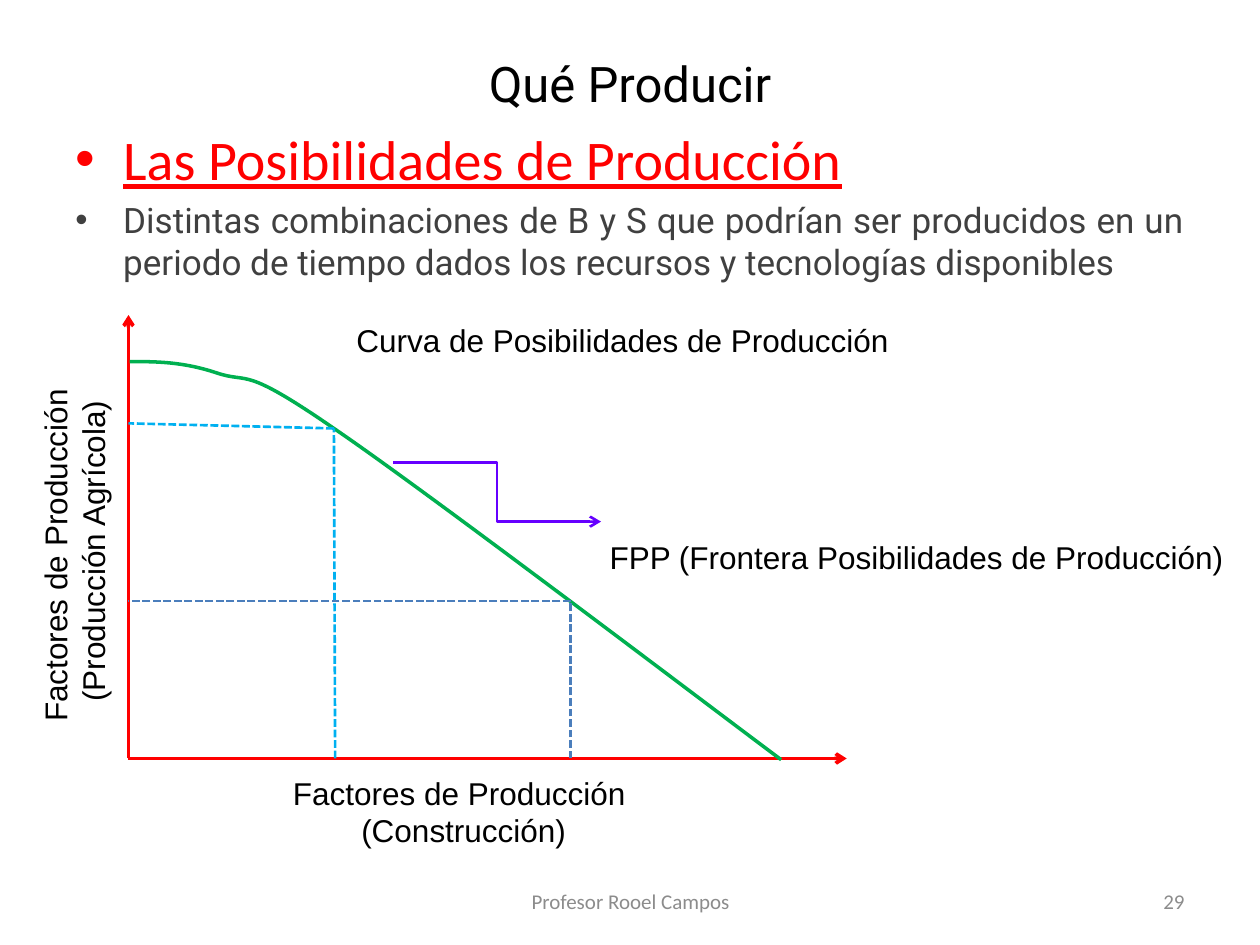
from lxml.etree import SubElement as Sub
from pptx import Presentation
from pptx.dml.color import RGBColor as RGB
from pptx.enum.dml import MSO_LINE as Dash
from pptx.enum.shapes import MSO_CONNECTOR as Conn
from pptx.enum.text import MSO_ANCHOR as Anchor, MSO_AUTO_SIZE as Fit, PP_ALIGN as Align
from pptx.oxml.ns import qn
from pptx.util import Inches, Pt

COLORS = {
    "black": "000000", "red": "FF0000", "dark": "404040", "gray": "8C8C8C",
    "green": "00B050", "sky": "00B0F0", "blue": "4B7EBC", "violet": "6600FF",
}
LEFT, BASE = 1.02, 6.02  # origin of the axes


def color(name):
    return RGB.from_string(COLORS[name])


def place(shape, box):
    shape.left, shape.top, shape.width, shape.height = map(Inches, box)


def write(para, text, font="Arial", size=18, ink="black", align=Align.LEFT, under=None):
    para.alignment = align
    run = para.add_run()
    run.text = text
    face = run.font
    face.name, face.size, face.underline = font, Pt(size), under
    face.color.rgb = color(ink)


def add_text(slide, box, lines, wrap=False, anchor=Anchor.TOP, turn=0, **style):
    shape = slide.shapes.add_textbox(*map(Inches, box))
    shape.rotation = turn
    frame = shape.text_frame
    frame.word_wrap, frame.vertical_anchor = wrap, anchor
    frame.auto_size = Fit.NONE if wrap else Fit.SHAPE_TO_FIT_TEXT
    for i, line in enumerate(lines):
        para = frame.add_paragraph() if i else frame.paragraphs[0]
        write(para, line, **style)


def add_bullet(para, text, size, **style):
    write(para, text, size=size, **style)
    para.space_before = Pt(size * 0.2)
    props = para._p.get_or_add_pPr()
    props.set("marL", str(Inches(0.38)))
    props.set("indent", str(Inches(-0.38)))
    Sub(props, qn("a:buFont"), typeface="Arial")
    Sub(props, qn("a:buChar"), char="•")


def add_line(slide, start, end, ink, width=1.5, dash=False, arrow=False,
             kind=Conn.STRAIGHT):
    line = slide.shapes.add_connector(kind, *map(Inches, start + end))
    line.line.color.rgb = color(ink)
    line.line.width = Pt(width)
    if dash:
        line.line.dash_style = Dash.SQUARE_DOT
    if arrow:
        Sub(line.line._get_or_add_ln(), qn("a:tailEnd"), type="arrow")
    Sub(line._element.spPr, qn("a:effectLst"))


def add_curve(slide, start, points, ink, width):
    """Draw Bezier segments; each takes three of the points."""
    pen = slide.shapes.build_freeform(*map(Inches, start), scale=1.0)
    pen.add_line_segments([tuple(map(Inches, p)) for p in points], close=False)
    shape = pen.convert_to_shape()
    shape.shadow.inherit = False
    shape.fill.background()
    shape.line.color.rgb = color(ink)
    shape.line.width = Pt(width)
    route = shape._element.find(".//" + qn("a:path"))
    steps = route.findall(qn("a:lnTo"))
    for i in range(0, len(steps), 3):
        bend = Sub(route, qn("a:cubicBezTo"))
        for step in steps[i:i + 3]:
            bend.append(step[0])
            route.remove(step)


def add_guides(slide, foot, point, level, ink):
    """Dashed lines from the x axis to a curve point and on to the y axis."""
    add_line(slide, (foot, BASE), point, ink, dash=True)
    add_line(slide, point, (LEFT, level), ink, dash=True)


def add_body(slide):
    box = slide.shapes.add_textbox(*map(Inches, (0.5, 0.94, 9, 1.48)))
    frame = box.text_frame
    frame.word_wrap = True
    add_bullet(frame.paragraphs[0], "Las Posibilidades de Producción", 32,
               font="Calibri", ink="red", under=True)
    add_bullet(frame.add_paragraph(),
               "Distintas combinaciones de B y S que podrían ser producidos en un "
               "periodo de tiempo dados los recursos y tecnologías disponibles",
               20, font="Roboto", ink="dark", align=Align.JUSTIFY)


def main():
    deck = Presentation()
    deck.slide_width, deck.slide_height = Inches(10), Inches(7.5)
    slide = deck.slides.add_slide(deck.slide_layouts[5])

    # Title and bullets
    title = slide.shapes.title
    place(title, (0.5, 0.3, 9, 0.71))
    title.text_frame.vertical_anchor = Anchor.MIDDLE
    write(title.text_frame.paragraphs[0], "Qué Producir", font="Roboto", size=28,
          align=Align.CENTER)
    add_body(slide)

    # Axes and frontier
    for tip in ((LEFT, 2.5), (6.72, BASE)):
        add_line(slide, (LEFT, BASE), tip, "red", width=2, arrow=True)
    add_curve(slide, (1.03, 2.87), [
        (1.24, 2.87), (1.45, 2.87), (1.72, 2.96),
        (1.99, 3.05), (1.91, 2.89), (2.65, 3.4),
        (3.4, 3.91), (5.61, 5.59), (6.2, 6.03),
    ], "green", 2)

    # Labels of the graph
    add_text(slide, (2.73, 2.5, 4.47, 0.4), ["Curva de Posibilidades de Producción"])
    axis = "Factores de Producción "
    add_text(slide, (2.17, 6.09, 3.02, 0.71), [axis, "(Construcción)"],
             align=Align.CENTER)
    add_text(slide, (-0.88, 4.02, 2.94, 0.71), [axis, "(Producción Agrícola)"],
             turn=270, align=Align.CENTER)

    # Two production points and the pointer to the frontier's name
    add_guides(slide, 2.66, (2.65, 3.4), 3.36, "sky")
    add_guides(slide, 4.53, (4.53, 4.77), 4.77, "blue")
    add_line(slide, (3.12, 3.67), (4.77, 4.14), "violet", arrow=True, kind=Conn.ELBOW)
    add_text(slide, (4.74, 4.22, 5.26, 0.4),
             ["FPP (Frontera Posibilidades de Producción)"])

    # Footer
    foot = dict(wrap=True, anchor=Anchor.MIDDLE, font="Calibri", size=12, ink="gray")
    add_text(slide, (3.42, 6.95, 3.17, 0.4), ["Profesor Rooel Campos"],
             align=Align.CENTER, **foot)
    add_text(slide, (7.17, 6.95, 2.33, 0.4), ["29"], align=Align.RIGHT, **foot)

    deck.save("out.pptx")


if __name__ == "__main__":
    main()
